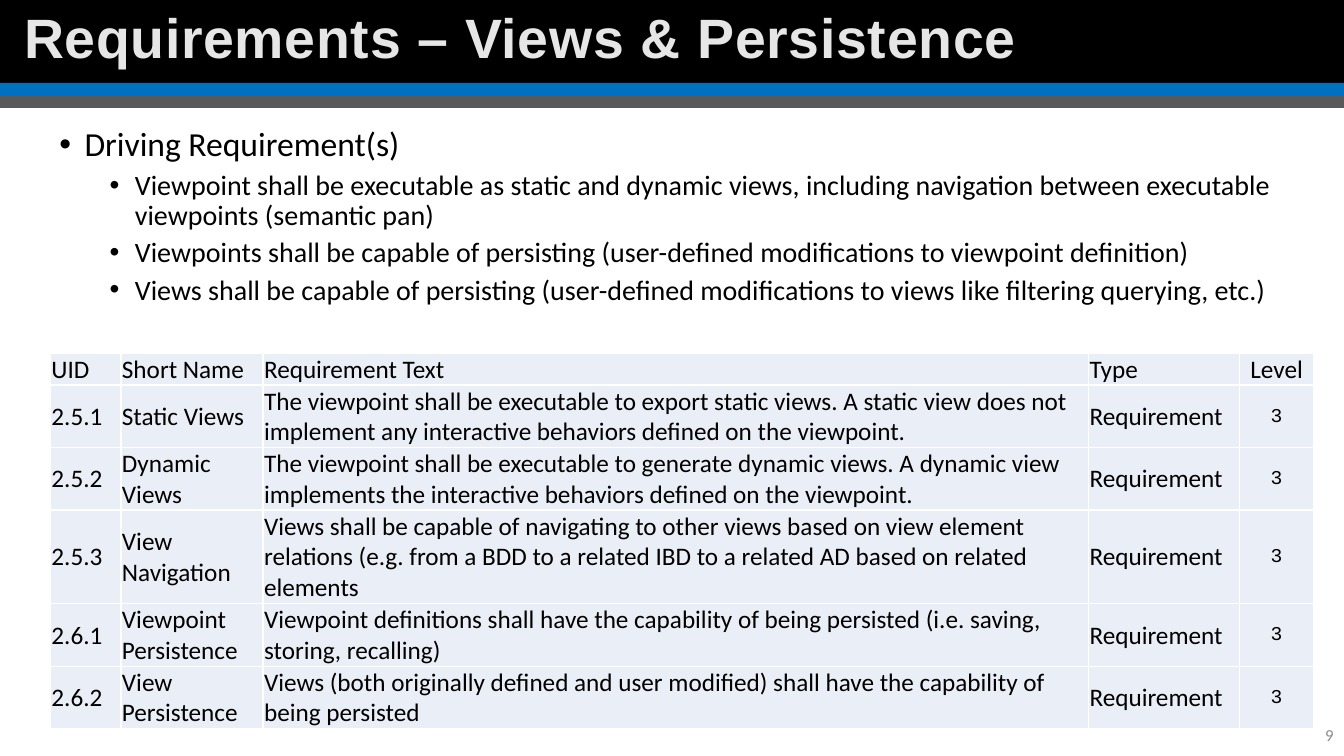
import pptx
import pptx.dml.color
import pptx.enum.shapes
import pptx.enum.text
import pptx.oxml
import pptx.oxml.ns
import pptx.util

ANCHOR = pptx.enum.text.MSO_ANCHOR
ALIGN = pptx.enum.text.PP_ALIGN
DRAWING_NS = pptx.oxml.ns.nsdecls("a")

BULLETS = [
    (0, "Driving Requirement(s)"),
    (1, "Viewpoint shall be executable as static and dynamic views, including "
        "navigation between executable viewpoints (semantic pan)"),
    (1, "Viewpoints shall be capable of persisting (user-defined modifications "
        "to viewpoint definition)"),
    (1, "Views shall be capable of persisting (user-defined modifications to "
        "views like filtering querying, etc.)"),
]

HEADER = ("UID", "Short Name", "Requirement Text", "Type", "Level")
REQUIREMENTS = [
    ("2.5.1", "Static Views",
     "The viewpoint shall be executable to export static views. A static view "
     "does not implement any interactive behaviors defined on the viewpoint."),
    ("2.5.2", "Dynamic Views",
     "The viewpoint shall be executable to generate dynamic views. A dynamic view "
     "implements the interactive behaviors defined on the viewpoint."),
    ("2.5.3", "View Navigation",
     "Views shall be capable of navigating to other views based on view element "
     "relations (e.g. from a BDD to a related IBD to a related AD based on "
     "related elements"),
    ("2.6.1", "Viewpoint Persistence",
     "Viewpoint definitions shall have the capability of being persisted "
     "(i.e. saving, storing, recalling)"),
    ("2.6.2", "View Persistence",
     "Views (both originally defined and user modified) shall have the "
     "capability of being persisted"),
]
COLUMN_WIDTHS = (7, 14.1, 81.9, 15, 7.3)
ROW_LINES = (1, 2, 2, 3, 2, 2)
LINE_HEIGHT = 3.1


def rgb(hex_colour):
    return pptx.dml.color.RGBColor.from_string(hex_colour)


def grid(cells):
    """Length of a number of grid cells, ten to the inch."""
    return pptx.util.Inches(cells / 10)


def add_xml(parent, xml):
    parent.append(pptx.oxml.parse_xml(xml))


class Deck:
    WIDTH, HEIGHT = 133.33, 75
    BODY_FONT, TITLE_FONT, LEVEL_FONT = "Calibri", "Arial", "Courier New"
    INK, PAPER, CELL = "000000", "FFFFFF", "EAEFF7"

    def __init__(self):
        self.presentation = pptx.Presentation()
        self.presentation.slide_width = grid(self.WIDTH)
        self.presentation.slide_height = grid(self.HEIGHT)
        self.slide = self.presentation.slides.add_slide(
            self.presentation.slide_layouts[6])

    def band(self, top, height, colour):
        band = self.slide.shapes.add_shape(
            pptx.enum.shapes.MSO_SHAPE.RECTANGLE,
            0, grid(top), grid(self.WIDTH), grid(height))
        band.shadow.inherit = False
        band.fill.solid()
        band.fill.fore_color.rgb = rgb(colour)
        band.line.fill.background()

    def rule(self, y, colour, weight):
        rule = self.slide.shapes.add_connector(
            pptx.enum.shapes.MSO_CONNECTOR.STRAIGHT,
            0, grid(y), grid(self.WIDTH), grid(y))
        rule.line.color.rgb = rgb(colour)
        rule.line.width = pptx.util.Pt(weight)
        add_xml(rule._element.spPr, f"<a:effectLst {DRAWING_NS}/>")

    def style(self, paragraph, size, colour=INK, font=BODY_FONT, bold=False):
        paragraph.font.size = pptx.util.Pt(size)
        paragraph.font.name = font
        paragraph.font.bold = bold
        paragraph.font.color.rgb = rgb(colour)

    def frame(self, left, top, width, height, anchor=ANCHOR.TOP):
        frame = self.slide.shapes.add_textbox(
            grid(left), grid(top), grid(width), grid(height)).text_frame
        frame.word_wrap = True
        frame.vertical_anchor = anchor
        return frame

    def title(self, text):
        heading = self.frame(1.4, 1.2, 105.4, 5.7, ANCHOR.MIDDLE).paragraphs[0]
        heading.text = text
        heading.line_spacing = 0.9
        self.style(heading, 39.6, "E7E6E6", self.TITLE_FONT, True)
        heading.runs[0].font._element.set("spc", "50")

    def page_number(self, number):
        footer = self.frame(103.3, 70.9, 30, 4, ANCHOR.MIDDLE).paragraphs[0]
        footer.text = number
        footer.alignment = ALIGN.RIGHT
        self.style(footer, 12, "8C8C8C")

    def bullets(self, items):
        frame = self.frame(4.9, 12.2, 123.5, 23.5)
        for index, (level, text) in enumerate(items):
            item = frame.add_paragraph() if index else frame.paragraphs[0]
            item.text = text
            item.level = level
            item.line_spacing = 0.9
            item.space_before = pptx.util.Pt((10, 5)[level])
            properties = item._p.get_or_add_pPr()
            properties.set("marL", str(grid(2.5 + 5 * level)))
            properties.set("indent", str(-grid(2.5)))
            add_xml(properties, f'<a:buFont {DRAWING_NS} typeface="Arial"/>')
            add_xml(properties, f'<a:buChar {DRAWING_NS} char="•"/>')
            self.style(item, (24, 20)[level])

    def table(self, left, top, rows):
        table = self.slide.shapes.add_table(
            len(rows), len(COLUMN_WIDTHS), grid(left), grid(top),
            grid(sum(COLUMN_WIDTHS)), grid(sum(ROW_LINES) * LINE_HEIGHT)).table
        for column, width in zip(table.columns, COLUMN_WIDTHS):
            column.width = grid(width)
        for row, lines in zip(table.rows, ROW_LINES):
            row.height = grid(lines * LINE_HEIGHT)
        for row, texts in enumerate(rows):
            for column, text in enumerate(texts):
                self.cell(table.cell(row, column), text,
                          is_level=column == len(HEADER) - 1, is_header=row == 0)

    def cell(self, cell, text, is_level, is_header):
        cell.margin_left = cell.margin_right = cell.margin_top = grid(0.1)
        cell.margin_bottom = 0
        cell.vertical_anchor = ANCHOR.MIDDLE
        for side in ("lnL", "lnR", "lnT", "lnB"):
            add_xml(cell._tc.get_or_add_tcPr(),
                    f'<a:{side} {DRAWING_NS} w="{pptx.util.Pt(1)}"><a:solidFill>'
                    f'<a:srgbClr val="{self.PAPER}"/></a:solidFill></a:{side}>')
        cell.fill.solid()
        cell.fill.fore_color.rgb = rgb(self.CELL)
        entry = cell.text_frame.paragraphs[0]
        entry.text = text
        entry.alignment = ALIGN.CENTER if is_level else ALIGN.LEFT
        if is_level and not is_header:
            self.style(entry, 14, font=self.LEVEL_FONT)
        else:
            self.style(entry, 18)


def main():
    deck = Deck()
    deck.band(0, 10.6, deck.INK)
    deck.band(9.5, 1.2, "595959")
    deck.rule(8.9, "0070C0", 9)
    deck.title("Requirements – Views & Persistence")
    deck.table(5, 35.1, [HEADER] + [
        (*requirement, "Requirement", "3") for requirement in REQUIREMENTS])
    deck.page_number("9")
    deck.bullets(BULLETS)
    deck.presentation.save("out.pptx")


if __name__ == "__main__":
    main()
